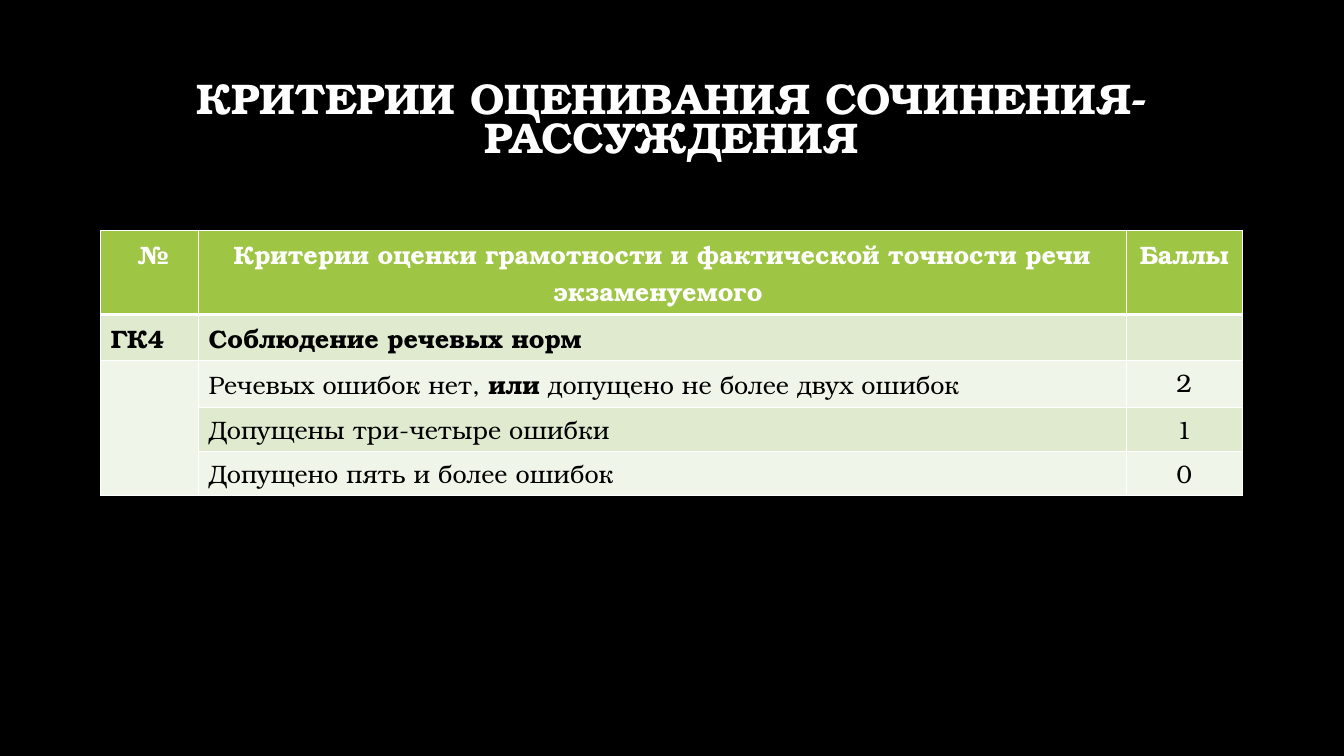
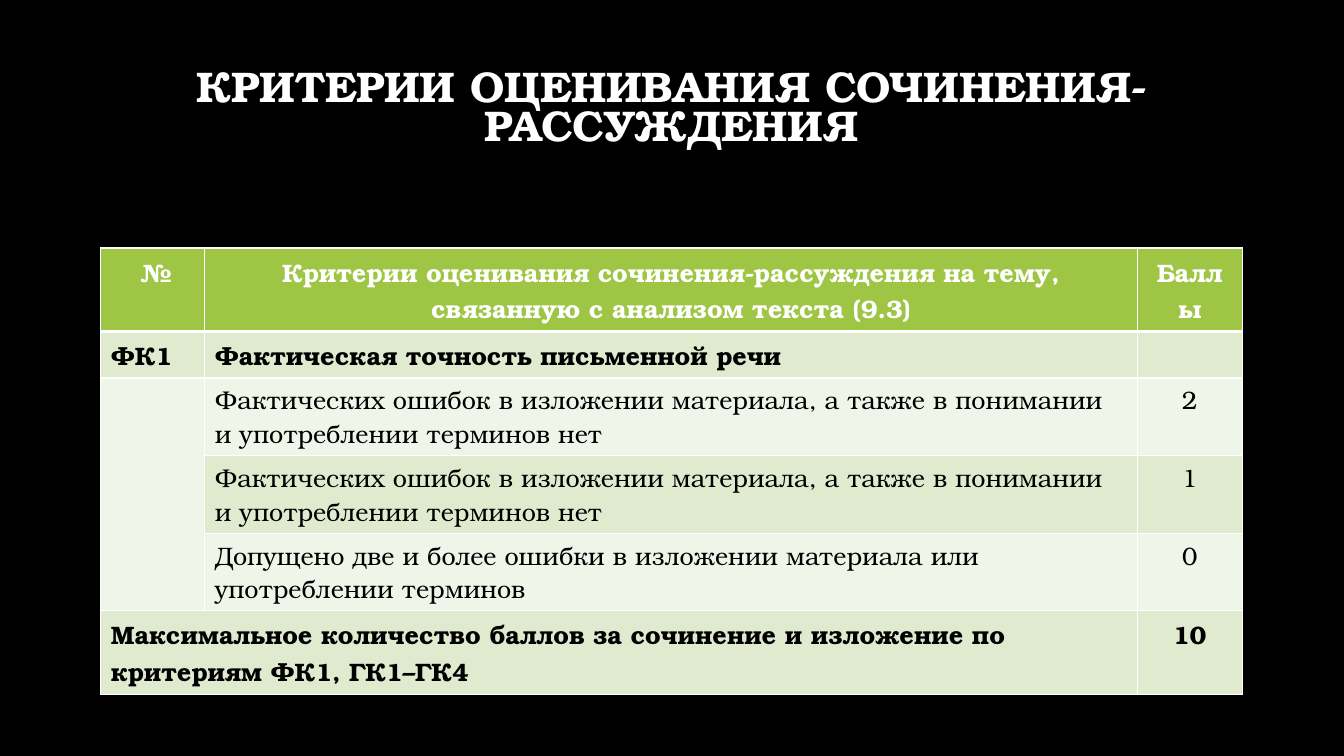
"""Build two slides with essay marking tables."""
from lxml.etree import SubElement
from pptx import Presentation
from pptx.dml.color import RGBColor
from pptx.enum.text import MSO_ANCHOR, PP_ALIGN
from pptx.oxml.ns import qn
from pptx.util import Inches, Pt

FONT = "TeX Gyre Bonum"
BLACK = RGBColor(0x00, 0x00, 0x00)
WHITE = RGBColor(0xFF, 0xFF, 0xFF)
GREEN = RGBColor(0x9E, 0xC5, 0x44)
BANDS = (RGBColor(0xF0, 0xF5, 0xE9), RGBColor(0xDF, 0xEA, 0xCF))
TITLE = "КРИТЕРИИ ОЦЕНИВАНИЯ СОЧИНЕНИЯ-РАССУЖДЕНИЯ"
LEFT = 1
WIDTH = 11.32
TERMS = ("Фактических ошибок в изложении материала, а также "
         "в понимании и употреблении терминов нет")

SPEECH = [
    (" №", "Критерии оценки грамотности и фактической точности речи экзаменуемого ", "Баллы"),
    ("*ГК4*", "*Соблюдение речевых норм*", ""),
    ("", "Речевых ошибок нет, *или* допущено не более двух ошибок", "2"),
    ("", "Допущены три-четыре ошибки", "1"),
    ("", "Допущено пять и более ошибок", "0"),
]
FACTS = [
    (" №", "Критерии оценивания сочинения-рассуждения на тему, "
     "связанную с анализом текста (9.3)", "Баллы"),
    ("*ФК1*", "*Фактическая точность письменной речи*", ""),
    ("", TERMS, "2"),
    ("", TERMS, "1"),
    ("", "Допущено две и более ошибки в изложении материала или употреблении терминов", "0"),
    ("*Максимальное количество баллов за сочинение и изложение "
     "по критериям ФК1, ГК1–ГК4*", "", "*10*"),
]


def add_run(para, text, size, color, bold):
    """Add one styled run to a paragraph."""
    run = para.add_run()
    run.text = text
    font = run.font
    font.name, font.size, font.bold = FONT, Pt(size), bold
    font.color.rgb = color


def add_title(slide, height):
    """Add the shared title in a box of the given height."""
    box = slide.shapes.add_textbox(Inches(LEFT), Inches(0.67), Inches(WIDTH), Inches(height))
    frame = box.text_frame
    frame.word_wrap = True
    frame.vertical_anchor = MSO_ANCHOR.MIDDLE
    para = frame.paragraphs[0]
    para.alignment = PP_ALIGN.CENTER
    para.line_spacing = 0.75
    add_run(para, TITLE, 30.6, WHITE, True)


def add_edge(cell, side, width):
    """Draw one white border of a cell."""
    props = cell._tc.get_or_add_tcPr()
    line = SubElement(props, qn("a:ln" + side), w=str(Pt(width)))
    fill = SubElement(line, qn("a:solidFill"))
    SubElement(fill, qn("a:srgbClr"), val=str(WHITE))


def fill_cell(cell, text, row, col):
    """Set the borders, fill and text of a cell by its place."""
    head = row == 0
    thick = {(0, "B"), (1, "T")}
    for side in "LRTB":
        add_edge(cell, side, 3 if (row, side) in thick else 1)
    cell.fill.solid()
    cell.fill.fore_color.rgb = GREEN if head else BANDS[row % 2]
    para = cell.text_frame.paragraphs[0]
    para.alignment = PP_ALIGN.CENTER if head or col == 2 else PP_ALIGN.LEFT
    for part, words in enumerate(text.split("*")):
        if words:
            add_run(para, words, 18, WHITE if head else BLACK, head or part % 2 == 1)


def add_grid(slide, top, cols, heights, rows):
    """Add a marking table."""
    frame = slide.shapes.add_table(len(rows), len(cols), Inches(LEFT), Inches(top),
                                   Inches(WIDTH), Inches(sum(heights)))
    table = frame.table
    for col, width in zip(table.columns, cols):
        col.width = Inches(width)
    for row, height in zip(table.rows, heights):
        row.height = Inches(height)
    for i, texts in enumerate(rows):
        for j, text in enumerate(texts):
            fill_cell(table.cell(i, j), text, i, j)
    table.cell(2, 0).merge(table.cell(4, 0))
    return table


def add_slide(deck):
    """Add a blank slide with a black ground."""
    slide = deck.slides.add_slide(deck.slide_layouts[6])
    fill = slide.background.fill
    fill.solid()
    fill.fore_color.rgb = BLACK
    return slide


def main():
    """Build and save the deck."""
    deck = Presentation()
    deck.slide_width, deck.slide_height = Inches(13.33), Inches(7.5)

    slide = add_slide(deck)
    add_title(slide, 1.09)
    add_grid(slide, 2.29, (0.97, 9.2, 1.15), (0.83, 0.46, 0.46, 0.44, 0.44), SPEECH)

    slide = add_slide(deck)
    add_title(slide, 0.85)
    table = add_grid(slide, 2.46, (1.03, 9.25, 1.04),
                     (0.83, 0.46, 0.77, 0.77, 0.77, 0.83), FACTS)
    table.cell(5, 0).merge(table.cell(5, 1))

    deck.save("out.pptx")


if __name__ == "__main__":
    main()
